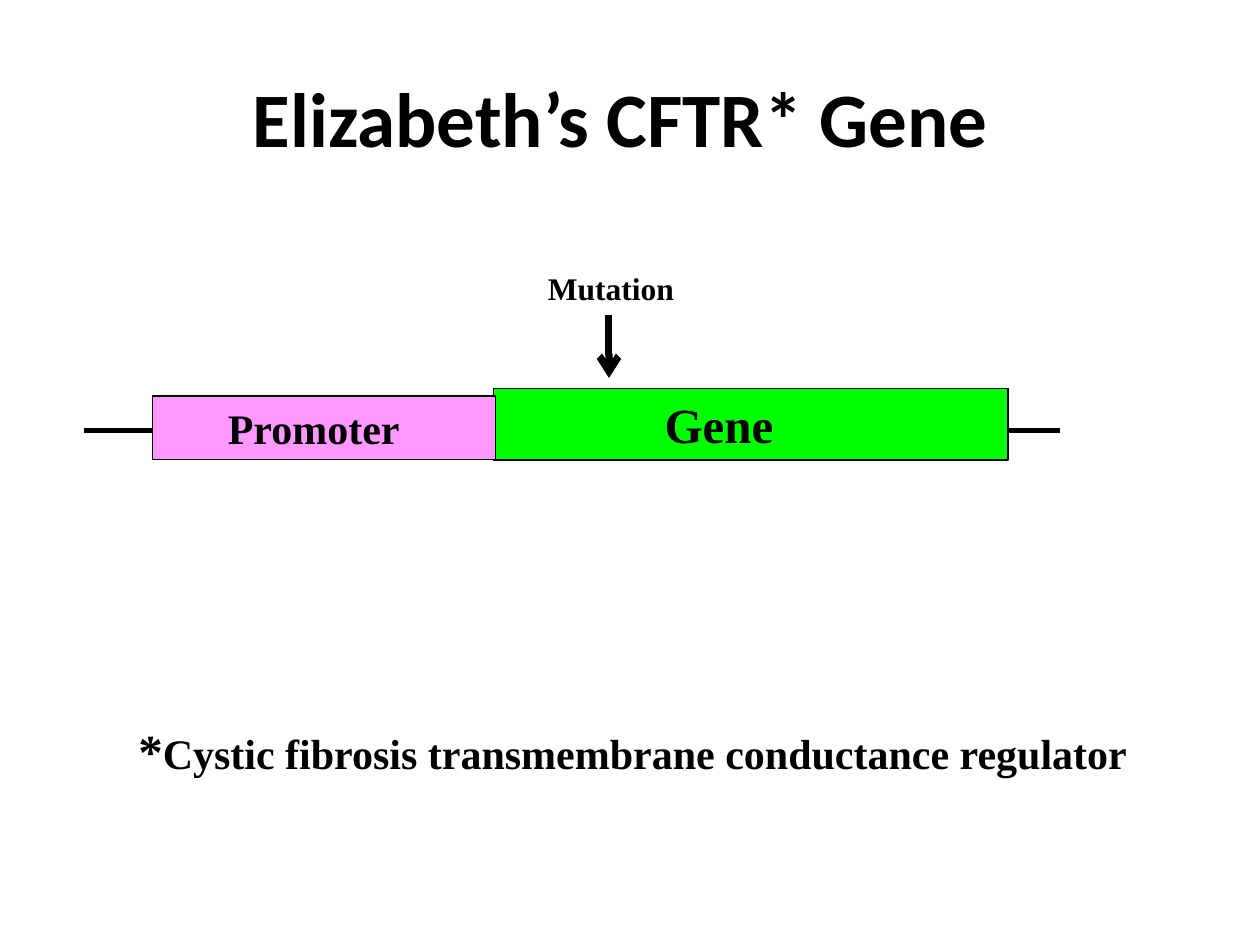
from dataclasses import dataclass

import lxml.etree
import pptx
import pptx.dml.color
import pptx.enum.shapes
import pptx.enum.text
import pptx.oxml.ns
import pptx.util

COLUMNS, ROWS = 120, 90
CELL = pptx.util.Inches(10) // COLUMNS
INSET = 1.2
BLACK = "000000"
SERIF = "Times New Roman"


@dataclass(frozen=True)
class Span:
    text: str
    size: int
    font: str = SERIF


@dataclass(frozen=True)
class Label:
    area: tuple[float, float, float, float]
    spans: tuple[Span, ...]
    left_inset: float = INSET
    right_inset: float = INSET
    wrap: bool = False
    centered: bool = False


@dataclass(frozen=True)
class Region:
    label: Label
    fill: str
    border: float


@dataclass(frozen=True)
class Stroke:
    start: tuple[float, float]
    end: tuple[float, float]
    width: float
    arrow: bool = False


TITLE = Label((6, 3.6, 108, 15), (Span("Elizabeth’s CFTR* Gene", 44, "Calibri"),),
              right_inset=2.9, wrap=True, centered=True)
BACKBONE = Stroke((8, 41), (101, 41), 3)
REGIONS = (
    Region(Label((47, 37, 49, 6.8), (Span("Gene", 28),), left_inset=16.3, wrap=True),
           "00FF00", 1),
    Region(Label((14.5, 37.7, 32.7, 6.1), (Span("Promoter", 24),), left_inset=7.2, wrap=True),
           "FF99FF", 0.75),
)
FOOTNOTE = Label((12, 68, 98.4, 6.8), (
    Span("*", 28),
    Span("Cystic fibrosis transmembrane conductance regulator", 24),
))
MUTATION_ARROW = Stroke((58, 30), (58, 36), 4, arrow=True)
MUTATION = Label((51, 25, 14.5, 4.8), (Span("Mutation", 18),))


def cells(*counts: float) -> list[int]:
    return [round(count * CELL) for count in counts]


def color(code: str) -> pptx.dml.color.RGBColor:
    return pptx.dml.color.RGBColor.from_string(code)


def write_label(shape, label: Label) -> None:
    frame = shape.text_frame
    frame.word_wrap = label.wrap
    frame.margin_left, frame.margin_right = cells(label.left_inset, label.right_inset)
    anchor = pptx.enum.text.MSO_ANCHOR
    frame.vertical_anchor = anchor.MIDDLE if label.centered else anchor.TOP
    para = frame.paragraphs[0]
    align = pptx.enum.text.PP_ALIGN
    para.alignment = align.CENTER if label.centered else align.LEFT
    for span in label.spans:
        run = para.add_run()
        run.text = span.text
        run.font.name = span.font
        run.font.size = pptx.util.Pt(span.size)
        run.font.bold = True
        run.font.color.rgb = color(BLACK)


def add_label(page, label: Label) -> None:
    write_label(page.shapes.add_textbox(*cells(*label.area)), label)


def add_region(page, region: Region) -> None:
    box = page.shapes.add_shape(
        pptx.enum.shapes.MSO_SHAPE.RECTANGLE, *cells(*region.label.area))
    box.shadow.inherit = False
    box.fill.solid()
    box.fill.fore_color.rgb = color(region.fill)
    box.line.color.rgb = color(BLACK)
    box.line.width = pptx.util.Pt(region.border)
    write_label(box, region.label)


def add_stroke(page, stroke: Stroke) -> None:
    connector = page.shapes.add_connector(
        pptx.enum.shapes.MSO_CONNECTOR.STRAIGHT, *cells(*stroke.start, *stroke.end))
    connector.line.color.rgb = color(BLACK)
    connector.line.width = pptx.util.Pt(stroke.width)
    properties = connector.element.spPr
    if stroke.arrow:
        outline = properties.find(pptx.oxml.ns.qn("a:ln"))
        lxml.etree.SubElement(outline, pptx.oxml.ns.qn("a:tailEnd"), type="arrow")
    lxml.etree.SubElement(properties, pptx.oxml.ns.qn("a:effectLst"))


def main() -> None:
    deck = pptx.Presentation()
    deck.slide_width, deck.slide_height = cells(COLUMNS, ROWS)
    page = deck.slides.add_slide(deck.slide_layouts[6])
    add_stroke(page, BACKBONE)
    add_label(page, TITLE)
    for region in REGIONS:
        add_region(page, region)
    add_label(page, FOOTNOTE)
    add_stroke(page, MUTATION_ARROW)
    add_label(page, MUTATION)
    deck.save("out.pptx")


if __name__ == "__main__":
    main()
